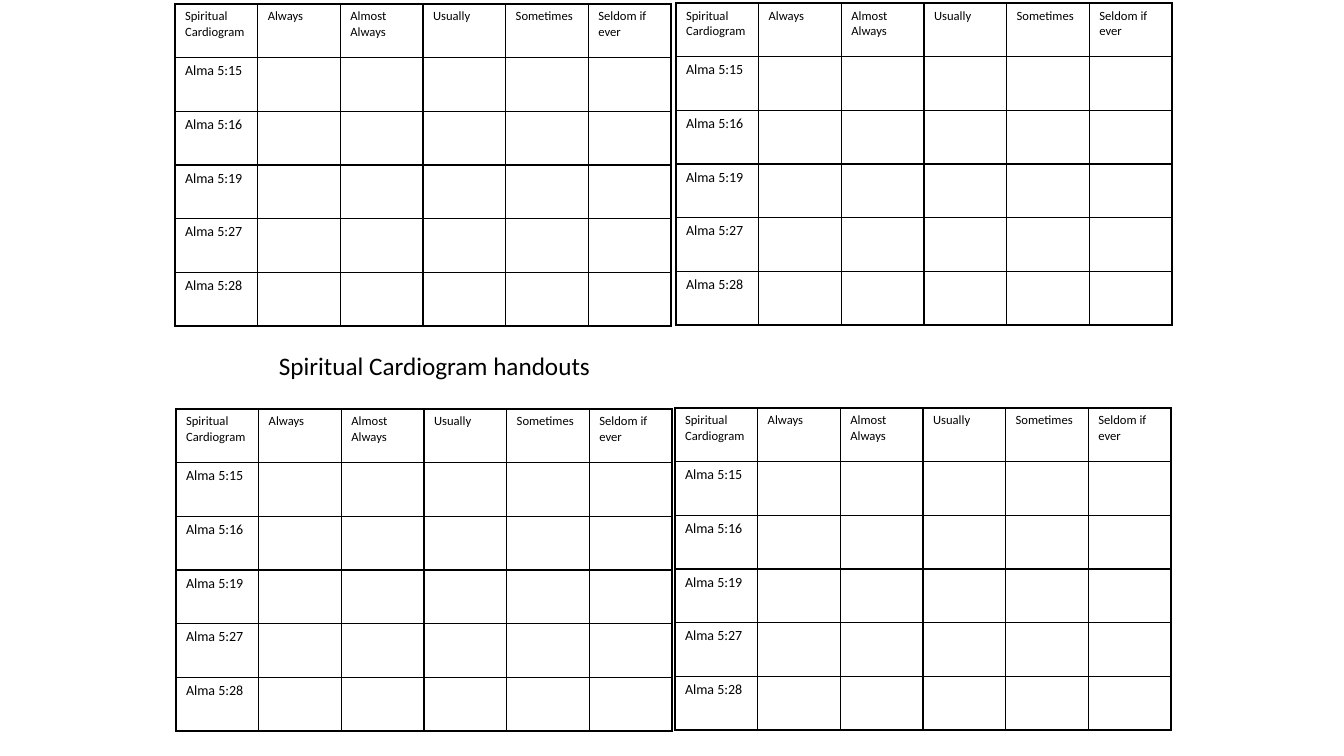
from lxml import etree
from pptx import Presentation
from pptx.dml.color import RGBColor
from pptx.enum.text import MSO_AUTO_SIZE as AutoSize
from pptx.oxml import parse_xml
from pptx.oxml.ns import nsdecls
from pptx.util import Pt

SCALE = 914400 / 100.8
BLACK = "000000"
RATINGS = ["Always", "Almost Always", "Usually", "Sometimes", "Seldom if ever"]
VERSES = ["Alma 5:15", "Alma 5:16", "Alma 5:19", "Alma 5:27", "Alma 5:28"]
HANDOUTS = [(175, 4), (676, 3), (176, 409), (675, 408)]
TABLE_WIDTH, TABLE_HEIGHT = 496, 322


def px(length):
    return round(length * SCALE)


def add_text(text_frame, text, size, color=BLACK):
    run = text_frame.paragraphs[0].add_run()
    run.text = text
    run.font.name = "Calibri"
    run.font.size = Pt(size)
    run.font.color.rgb = RGBColor.from_string(color)


presentation = Presentation()
presentation.slide_width = px(1344)
presentation.slide_height = px(756)
slide = presentation.slides.add_slide(presentation.slide_layouts[6])

grid = [["Spiritual Cardiogram"] + RATINGS]
grid += [[verse] + [""] * len(RATINGS) for verse in VERSES]

for left, top in HANDOUTS:
    table = slide.shapes.add_table(
        len(grid), len(grid[0]), px(left), px(top), px(TABLE_WIDTH), px(TABLE_HEIGHT)
    ).table
    table.first_row = False
    table.horz_banding = False
    for row_index, labels in enumerate(grid):
        for column_index, label in enumerate(labels):
            cell = table.cell(row_index, column_index)
            properties = cell._tc.get_or_add_tcPr()
            for side in ("lnL", "lnR", "lnT", "lnB"):
                border = parse_xml(f'<a:{side} {nsdecls("a")} w="{Pt(1)}"/>')
                fill = etree.SubElement(border, border.tag.replace(side, "solidFill"))
                etree.SubElement(fill, border.tag.replace(side, "srgbClr"), val=BLACK)
                properties.append(border)
            cell.fill.background()
            if label:
                add_text(cell.text_frame, label, 9 if row_index == 0 else 10)

title = slide.shapes.add_textbox(px(269), px(345), px(479), px(40))
title.text_frame.word_wrap = True
title.text_frame.auto_size = AutoSize.SHAPE_TO_FIT_TEXT
add_text(title.text_frame, "Spiritual Cardiogram handouts", 18)

presentation.save("out.pptx")
